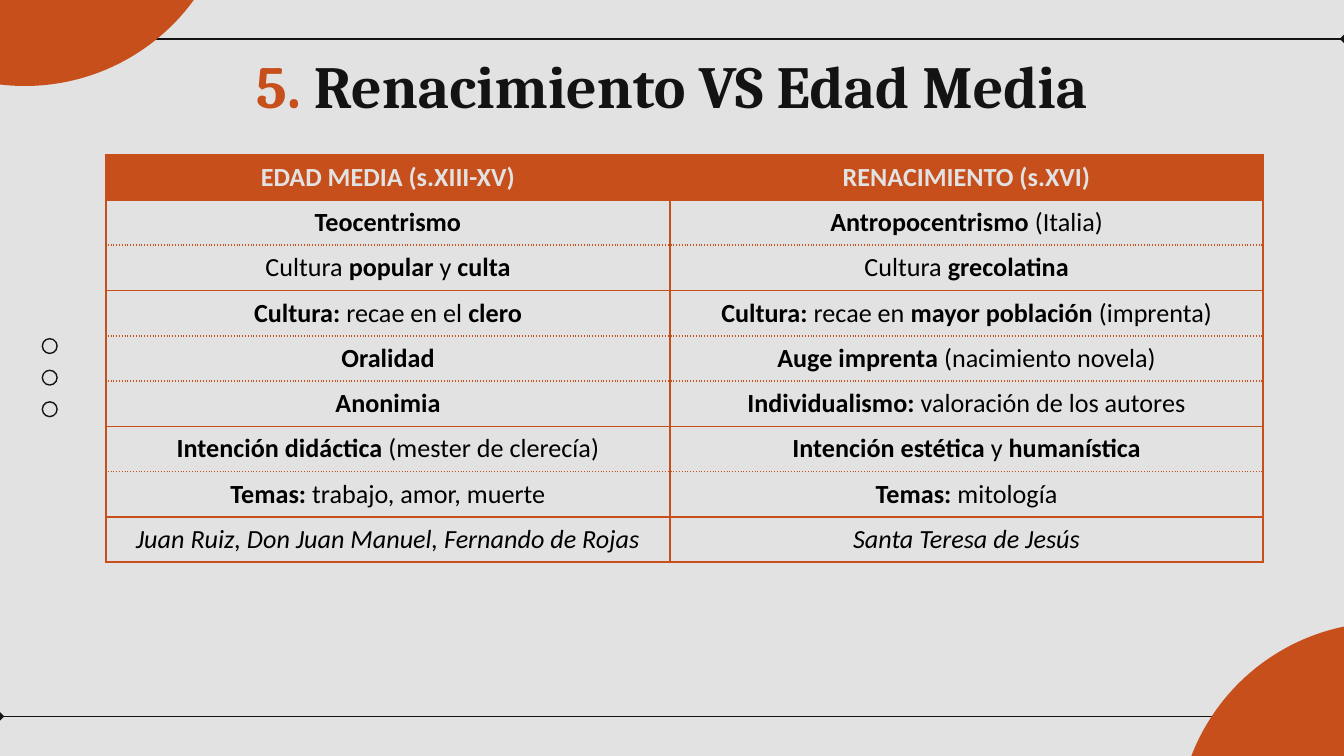
from lxml import etree
from pptx import Presentation
from pptx.dml.color import RGBColor
from pptx.enum.shapes import MSO_CONNECTOR, MSO_SHAPE
from pptx.enum.text import MSO_ANCHOR, MSO_AUTO_SIZE, PP_ALIGN
from pptx.oxml.ns import qn
from pptx.util import Inches, Pt

LINE = MSO_CONNECTOR.STRAIGHT
OVAL = MSO_SHAPE.OVAL
TOP, MIDDLE = MSO_ANCHOR.TOP, MSO_ANCHOR.MIDDLE
NO_FIT = MSO_AUTO_SIZE.NONE
CENTER = PP_ALIGN.CENTER

COLORS = {"paper": "E2E2E2", "ink": "141313", "rust": "C64F1C", "black": "000000"}
WIDTH = Inches(10)
HEIGHT = WIDTH * 9 // 16

# Asterisks switch bold on and off
ROWS = [
    ("*EDAD MEDIA (s.XIII-XV)", "*RENACIMIENTO (s.XVI)"),
    ("*Teocentrismo", "*Antropocentrismo *(Italia)"),
    ("Cultura *popular* y *culta", "Cultura *grecolatina"),
    ("*Cultura:* recae en el *clero",
     "*Cultura:* recae en *mayor población* (imprenta)"),
    ("*Oralidad", "*Auge imprenta* (nacimiento novela)"),
    ("*Anonimia", "*Individualismo:* valoración de los autores"),
    ("*Intención didáctica* (mester de clerecía)",
     "*Intención estética* y *humanística"),
    ("*Temas:* trabajo, amor, muerte", "*Temas:* mitología"),
    ("Juan Ruiz, Don Juan Manuel, Fernando de Rojas", "Santa Teresa de Jesús"),
]
DOTTED = {1, 3, 4, 6}  # rows with a dotted lower edge


def grid(count):
    """Length of square grid cells, 100 to the slide's width."""
    return round(WIDTH * count / 100)


def color(name):
    return RGBColor.from_string(COLORS[name])


def style(run, face, size, tint, bold):
    font = run.font
    font.name, font.size, font.bold = face, Pt(size), bold
    font.color.rgb = color(tint)


def add_rule(slide, start, end, row):
    rule = slide.shapes.add_connector(LINE, grid(start), grid(row), grid(end), grid(row))
    rule.line.color.rgb = color("ink")
    rule.line.width = Pt(0.75)
    props = rule.line._get_or_add_ln()
    etree.SubElement(props, qn("a:tailEnd"), type="diamond")
    etree.SubElement(rule._element.spPr, qn("a:effectLst"))


def add_disc(slide, left, top, size, fill=None):
    disc = slide.shapes.add_shape(OVAL, grid(left), grid(top), grid(size), grid(size))
    disc.shadow.inherit = False
    if fill:
        disc.fill.solid()
        disc.fill.fore_color.rgb = color(fill)
        disc.line.fill.background()
    else:
        disc.fill.background()
        disc.line.color.rgb = color("ink")
        disc.line.width = Pt(0.75)


def set_title(slide):
    title = slide.shapes.title
    title.left, title.top = grid(7.87), grid(2.6)
    title.width, title.height = grid(84.25), grid(6.3)
    frame = title.text_frame
    frame.auto_size, frame.vertical_anchor = NO_FIT, TOP
    frame.margin_left = frame.margin_right = grid(1)
    frame.margin_top = frame.margin_bottom = grid(1)
    para = frame.paragraphs[0]
    para.alignment = CENTER
    for text, tint in (("5. ", "rust"), ("Renacimiento VS Edad Media", "ink")):
        run = para.add_run()
        run.text = text
        style(run, "Cambria", 32, tint, True)


def add_edge(cell, side, dash):
    edge = etree.SubElement(cell._tc.get_or_add_tcPr(), qn("a:ln" + side), w=str(Pt(1)))
    fill = etree.SubElement(edge, qn("a:solidFill"))
    etree.SubElement(fill, qn("a:srgbClr"), val=COLORS["rust"])
    etree.SubElement(edge, qn("a:prstDash"), val=dash)


def fill_cell(cell, text, row):
    head, last = row == 0, row == len(ROWS) - 1
    cell.vertical_anchor = MIDDLE
    # Borders come before the fill
    for side in "LRTB":
        dots = side == "T" and row - 1 in DOTTED or side == "B" and row in DOTTED
        add_edge(cell, side, "sysDot" if dots else "solid")
    if head:
        cell.fill.solid()
        cell.fill.fore_color.rgb = color("rust")
    else:
        cell.fill.background()
    para = cell.text_frame.paragraphs[0]
    para.alignment = CENTER
    for index, part in enumerate(text.split("*")):
        if part:
            run = para.add_run()
            run.text = part
            style(run, "Calibri", 14, "paper" if head else "black", index % 2 == 1)
            run.font.italic = last


def add_grid(slide):
    frame = slide.shapes.add_table(len(ROWS), 2, grid(7.87), grid(11.5),
                                   grid(86.1), grid(3.37 * len(ROWS)))
    table = frame.table
    table.first_row = table.horz_banding = False
    for column, width in zip(table.columns, (42, 44.1)):
        column.width = grid(width)
    for row, texts in enumerate(ROWS):
        for col, text in enumerate(texts):
            fill_cell(table.cell(row, col), text, row)


def main():
    deck = Presentation()
    deck.slide_width, deck.slide_height = WIDTH, HEIGHT
    slide = deck.slides.add_slide(deck.slide_layouts[5])
    slide.background.fill.solid()
    slide.background.fill.fore_color.rgb = color("paper")

    # Rules, small rings and corner discs
    add_rule(slide, 100.1, -0.1, 53.3)
    add_rule(slide, -0.1, 100.1, 2.9)
    for step in range(3):
        add_disc(slide, 3.15, 25.2 + 2.35 * step, 1.1)
    for left, top in ((87.6, 46.3), (-13.7, -24.7)):
        add_disc(slide, left, top, 31.1, "rust")

    # Title and comparison
    set_title(slide)
    add_grid(slide)
    deck.save("out.pptx")


if __name__ == "__main__":
    main()
